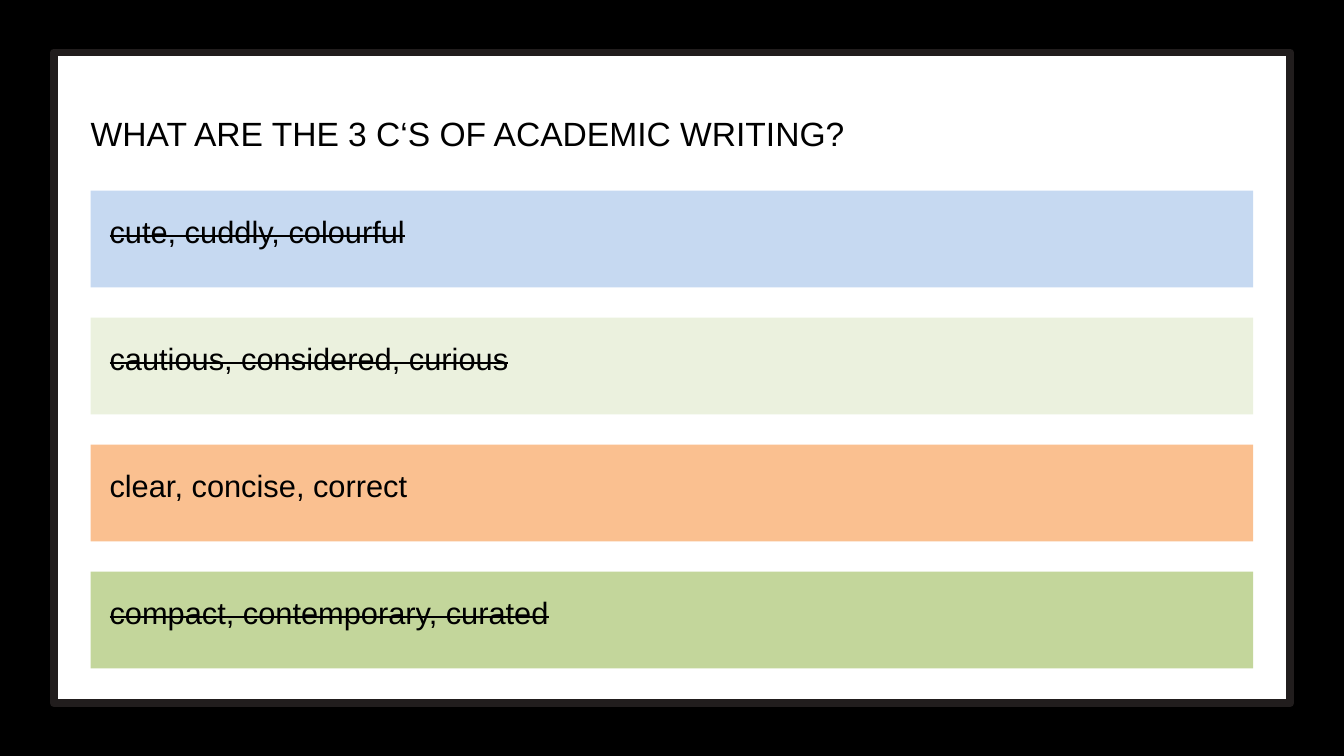
import pptx
import pptx.util
import pptx.dml.color
import pptx.enum.shapes
import pptx.enum.text

Cm = pptx.util.Cm
Pt = pptx.util.Pt


def tint(code):
    return pptx.dml.color.RGBColor.from_string(code)


def write(frame, text, size=33, font="Arial", color="000000", gap=46.2,
          inset=0, anchor="MIDDLE", fit="NONE", strike=False):
    """Put one formatted paragraph into a text frame."""
    frame.word_wrap = True
    frame.auto_size = getattr(pptx.enum.text.MSO_AUTO_SIZE, fit)
    frame.vertical_anchor = getattr(pptx.enum.text.MSO_ANCHOR, anchor)
    frame.margin_left = frame.margin_right = Cm(inset)
    frame.margin_top = frame.margin_bottom = Cm(inset)
    para = frame.paragraphs[0]
    para.alignment = pptx.enum.text.PP_ALIGN.LEFT
    para.line_spacing = Pt(gap)
    run = para.add_run()
    run.text = text
    run.font.name = font
    run.font.size = Pt(size)
    run.font.color.rgb = tint(color)
    if strike:
        run._r.get_or_add_rPr().set("strike", "sngStrike")


class Deck:
    left, width = 3.43, 43.94

    def __init__(self, wide, high, back):
        self.prs = pptx.Presentation()
        self.prs.slide_width, self.prs.slide_height = Cm(wide), Cm(high)
        self.slide = self.prs.slides.add_slide(self.prs.slide_layouts[5])
        fill = self.slide.background.fill
        fill.solid()
        fill.fore_color.rgb = tint(back)

    def panel(self, x, y, w, h, color, edge=None, weight=0):
        kind = pptx.enum.shapes.MSO_SHAPE.RECTANGLE
        box = self.slide.shapes.add_shape(kind, Cm(x), Cm(y), Cm(w), Cm(h))
        box.shadow.inherit = False
        box.fill.solid()
        box.fill.fore_color.rgb = tint(color)
        if edge:
            box.line.color.rgb = tint(edge)
            box.line.width = Pt(weight)
        else:
            box.line.fill.background()

    def title(self, text, y, h):
        head = self.slide.shapes.title
        head.left, head.top = Cm(self.left), Cm(y)
        head.width, head.height = Cm(self.width), Cm(h)
        write(head.text_frame, text, size=36, gap=84, anchor="TOP",
              fit="SHAPE_TO_FIT_TEXT")

    def answer(self, text, y, color, strike):
        high, rise = 3.66, 0.81
        self.panel(self.left, y, self.width, high, color)
        # The label starts above its bar and ends with it
        label = self.slide.shapes.add_textbox(
            Cm(self.left), Cm(y - rise), Cm(self.width), Cm(high + rise))
        write(label.text_frame, text, inset=0.71, strike=strike)


def main():
    deck = Deck(50.8, 28.58, "000000")

    # White board with dark frame
    deck.panel(2.03, 1.98, 46.74, 24.61, "FFFFFF", edge="211D1D", weight=8.25)

    # Question
    deck.title("WHAT ARE THE 3 C‘S OF ACADEMIC WRITING?", 2.82, 2.57)

    # Answers, the wrong ones struck out
    rows = [
        ("cute, cuddly, colourful", "C6D9F1", True),
        ("cautious, considered, curious", "EBF1DE", True),
        ("clear, concise, correct", "FAC090", False),
        ("compact, contemporary, curated", "C3D69B", True),
    ]
    for i, (text, color, strike) in enumerate(rows):
        deck.answer(text, 7.21 + 4.8 * i, color, strike)

    # The title lies behind the board until it is moved to the front
    deck.slide.shapes._spTree.append(deck.slide.shapes.title._element)
    deck.prs.save("out.pptx")


if __name__ == "__main__":
    main()
